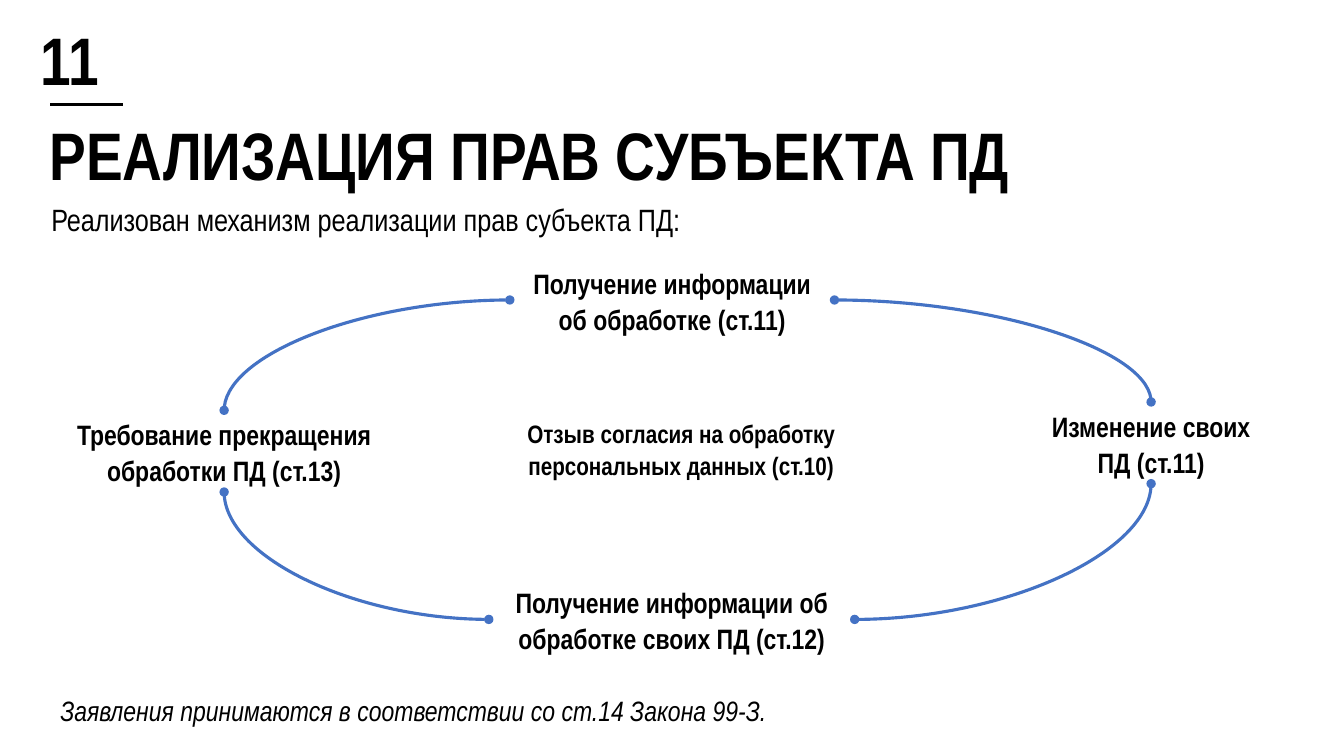
from dataclasses import dataclass
from lxml import etree
from pptx import Presentation
from pptx import util as u
from pptx.dml.color import RGBColor
from pptx.enum import shapes, text
from pptx.oxml.ns import qn


@dataclass(frozen=True)
class Theme:
    font: str = "Arial Narrow"
    ink: RGBColor = RGBColor(0, 0, 0)
    blue: RGBColor = RGBColor(0x44, 0x72, 0xC4)
    head: int = 48
    lead: int = 22
    body: int = 20
    small: int = 18
    line: float = 2.25


T = Theme()
LEFT, MID, RIGHT = text.PP_ALIGN.LEFT, text.PP_ALIGN.CENTER, text.PP_ALIGN.RIGHT
TOP, LOW = text.MSO_ANCHOR.TOP, text.MSO_ANCHOR.BOTTOM
FIT, FIXED = text.MSO_AUTO_SIZE.SHAPE_TO_FIT_TEXT, text.MSO_AUTO_SIZE.NONE


def write(shape, box, lines, size, align=LEFT, bold=False, italic=False,
          gap=1.0, anchor=TOP, fit=FIT):
    """Place a text shape at box (cm) and fill it, one paragraph a line."""
    shape.left, shape.top, shape.width, shape.height = map(u.Cm, box)
    frame = shape.text_frame
    frame.word_wrap = True
    frame.auto_size = fit
    frame.vertical_anchor = anchor
    frame.text = lines
    for para in frame.paragraphs:
        para.alignment = align
        para.line_spacing = gap
        para.space_before = u.Pt(0)
        font = para.font
        font.name, font.size = T.font, u.Pt(size)
        font.bold, font.italic = bold, italic
        font.color.rgb = T.ink
    return shape


def label(slide, box, lines, size, **style):
    return write(slide.shapes.add_textbox(0, 0, 0, 0), box, lines, size, **style)


def link(slide, kind, start, end, color):
    """Draw a connector without a shadow between two points."""
    line = slide.shapes.add_connector(kind, *start, *end)
    line.line.color.rgb = color
    line.line.width = u.Pt(T.line)
    etree.SubElement(line._element.spPr, qn("a:effectLst"))
    return line


def arc(slide, start, end):
    """Quarter curve: leaves start sideways, meets end upright, dots at both."""
    line = link(slide, shapes.MSO_CONNECTOR.CURVE, start, end, T.blue)
    line._element.spPr.find(qn("a:prstGeom")).set("prst", "curvedConnector2")
    for tag in ("a:headEnd", "a:tailEnd"):
        etree.SubElement(line.line._get_or_add_ln(), qn(tag), type="oval")


def header(slide, x, y, w):
    """Slide number, rule, title and lead line."""
    label(slide, (x - 2.41, y - 2.74, 3.89, 2.74), "11", T.head,
          align=RIGHT, bold=True, gap=0.9, anchor=LOW, fit=FIXED)
    link(slide, shapes.MSO_CONNECTOR.STRAIGHT, (u.Cm(x), u.Cm(y)),
         (u.Cm(x + 1.83), u.Cm(y)), T.ink)
    write(slide.shapes.title, (x - 0.28, y - 0.15, w, 2.54),
          "РЕАЛИЗАЦИЯ ПРАВ СУБЪЕКТА ПД", T.head,
          bold=True, gap=0.9, anchor=LOW, fit=FIXED)
    write(slide.placeholders[1], (x - 0.23, y + 2.29, 21.29, 1.19),
          "Реализован механизм реализации прав субъекта ПД:", T.lead)


def ring(slide, x, y):
    """Four rights joined by curves around a fifth one."""
    tall = 2.06

    def right(dx, dy, w, lines, h=tall, size=T.body):
        return label(slide, (x + dx, y + dy, w, h), lines, size,
                     align=MID, bold=True, gap=1.07)

    north = right(11.58, 0, 8.18, "Получение информации\nоб обработке (ст.11)")
    east = right(24.92, 3.6, 5.64, "Изменение своих ПД (ст.11)")
    south = right(11.05, 8.05, 9.22,
                  "Получение информации об обработке своих ПД (ст.12)")
    west = right(0, 3.81, 8.76, "Требование прекращения обработки ПД (ст.13)")
    right(11.05, 3.83, 9.7,
          "Отзыв согласия на обработку\nперсональных данных (ст.10)",
          h=1.85, size=T.small)

    # Curves from the sides of north and south to the middles of east and west
    for pole in (north, south):
        for side in (east, west):
            edge = pole.left + (pole.width if side is east else 0)
            rim = side.top + (side.height if pole is south else 0)
            arc(slide, (edge, pole.top + pole.height // 2),
                (side.left + side.width // 2, rim))


def footer(slide, x, y, w):
    """Closing remark."""
    label(slide, (x, y, w, 1.12),
          "Заявления принимаются в соответствии со ст.14 Закона 99-З.",
          T.body, italic=True)


def main():
    deck = Presentation()
    deck.slide_width, deck.slide_height = u.Cm(33.87), u.Cm(19.05)
    slide = deck.slides.add_slide(deck.slide_layouts[0])
    edge = 1.27
    header(slide, edge, 2.64, 31.24)
    ring(slide, edge, 6.53)
    footer(slide, edge, 17.35, 28.19)
    deck.save("out.pptx")


if __name__ == "__main__":
    main()
